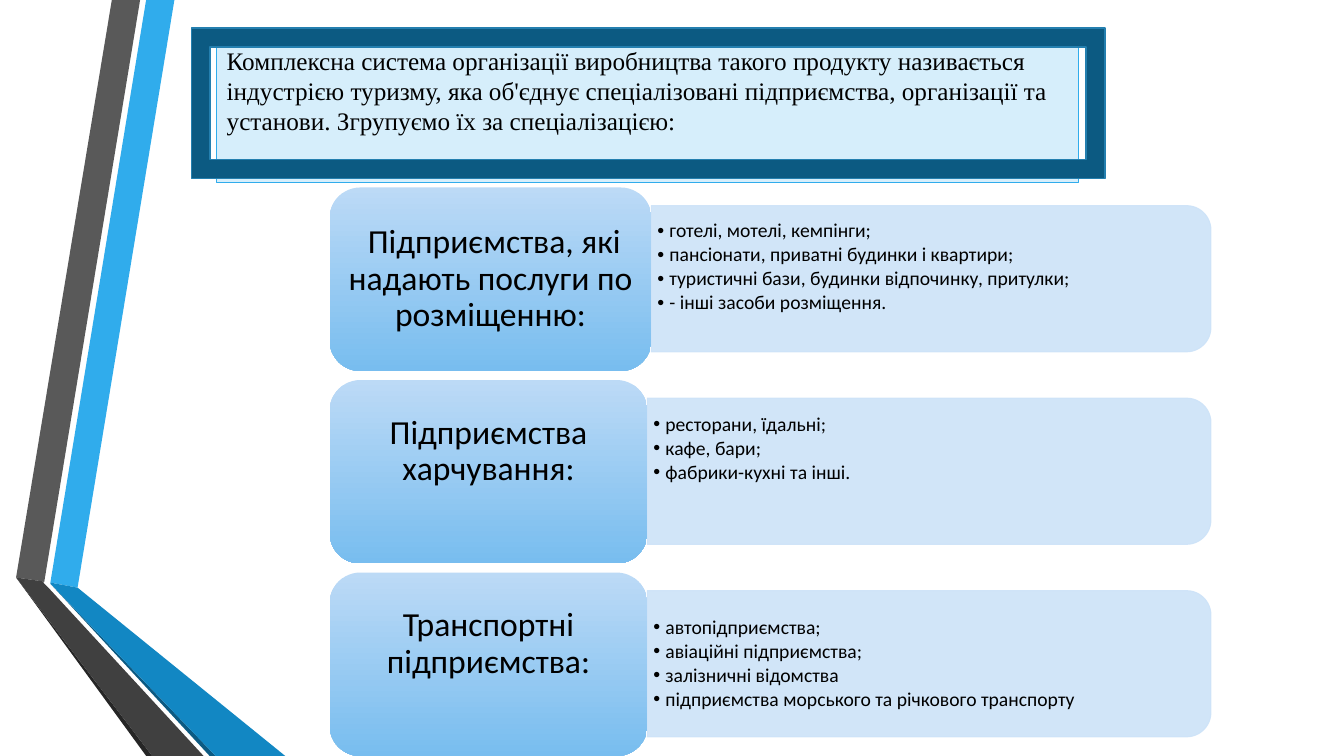
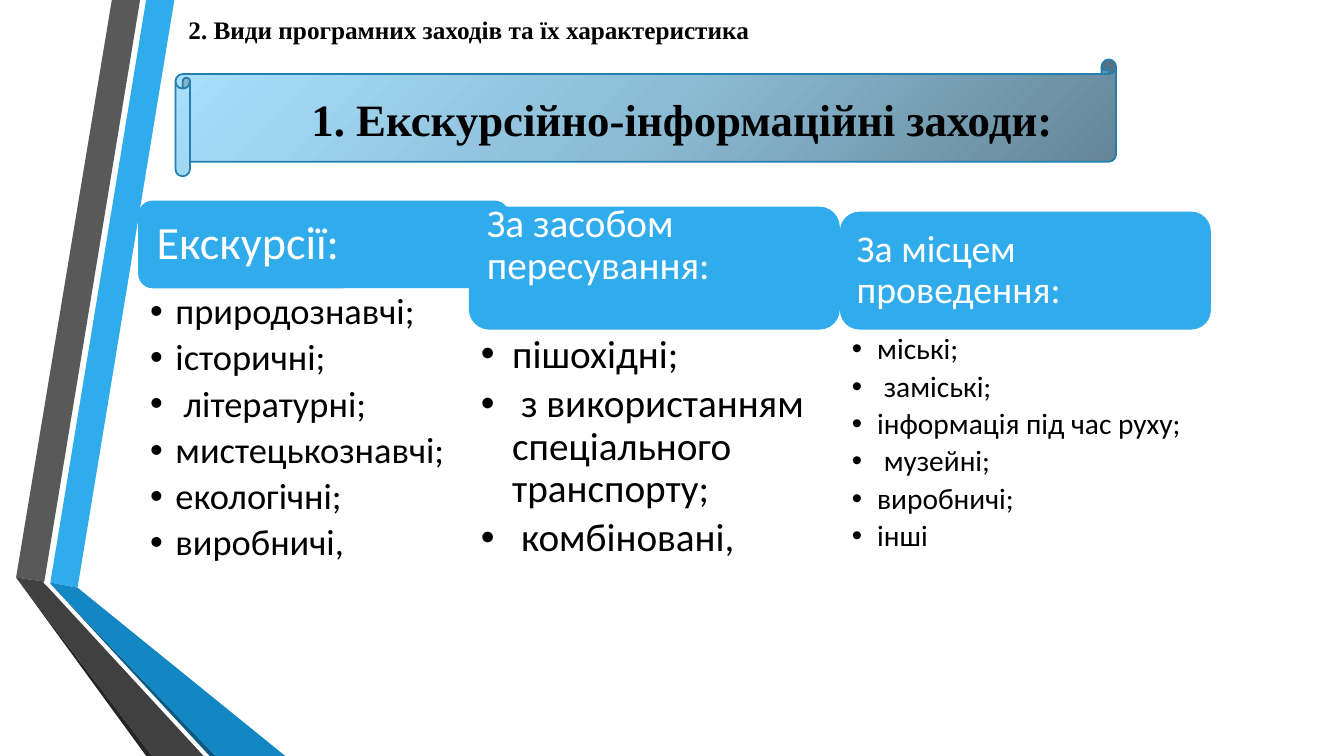
from dataclasses import dataclass

from lxml.etree import SubElement
from pptx import Presentation
from pptx.dml.color import RGBColor
from pptx.enum.shapes import MSO_SHAPE as Preset
from pptx.enum.text import MSO_ANCHOR as Anchor, PP_ALIGN as Align
from pptx.oxml import parse_xml
from pptx.oxml.ns import nsdecls, qn
from pptx.util import Emu, Pt

PX = 9144
SLIDE_WIDTH, SLIDE_HEIGHT = 1333, 750
SERIF, SANS = "Times New Roman", "Calibri"

BLACK = RGBColor(0x00, 0x00, 0x00)
WHITE = RGBColor(0xFF, 0xFF, 0xFF)
SKY = RGBColor(0x30, 0xAC, 0xEC)
BLUE = RGBColor(0x12, 0x87, 0xC3)
NAVY = RGBColor(0x0C, 0x5A, 0x82)
EDGE = RGBColor(0x24, 0x7F, 0xAF)
ICE = RGBColor(0xD6, 0xEE, 0xFB)
PANEL = RGBColor(0xCD, 0xE3, 0xF8)
GRAY = RGBColor(0x59, 0x59, 0x59)
DARK_GRAY = RGBColor(0x40, 0x40, 0x40)
CHARCOAL = RGBColor(0x26, 0x26, 0x26)
LABEL_STOPS = [(0, RGBColor(0xBC, 0xDA, 0xF6)), (100, RGBColor(0x78, 0xBD, 0xEF))]
SCROLL_STOPS = [
    (0, RGBColor(0x63, 0x84, 0x96)),
    (50, RGBColor(0x8C, 0xBC, 0xD5)),
    (100, RGBColor(0xA7, 0xE0, 0xFD)),
]

RIBBONS = [
    (SKY, [(50, 578), (77, 583), (173, 0), (145, 0)]),
    (GRAY, [(139, 0), (111, 0), (16, 573), (44, 577)]),
    (CHARCOAL, [(16, 573), (145, 750), (151, 750)]),
    (NAVY, [(50, 579), (208, 750), (214, 750)]),
    (BLUE, [(50, 579), (214, 750), (283, 750), (77, 583), (50, 578)]),
    (DARK_GRAY, [(202, 750), (48, 583), (43, 578), (44, 577), (16, 573), (151, 750)]),
]


@dataclass
class Row:
    label: str
    items: list
    label_width: int = 315
    label_lift: int = 0
    items_lift: int = 0


@dataclass
class Column:
    box: tuple
    heading: str
    heading_size: int
    heading_inset: int
    items: list
    size: int
    indent: int
    gap: int
    right_inset: int
    heading_lift: int = 0


ROWS = [
    Row(" Підприємства, які надають послуги по розміщенню:",
        ["готелі, мотелі, кемпінги;",
         "пансіонати, приватні будинки і квартири;",
         "туристичні бази, будинки відпочинку, притулки;",
         "- інші засоби розміщення."],
        label_width=319, items_lift=22),
    Row("Підприємства харчування:",
        ["ресторани, їдальні;", "кафе, бари;", "фабрики-кухні та інші."],
        label_lift=40, items_lift=44),
    Row("Транспортні підприємства:",
        ["автопідприємства;", "авіаційні підприємства;", "залізничні відомства",
         "підприємства морського та річкового транспорту"],
        label_lift=40),
]

COLUMNS = [
    Column((137, 199, 368, 87), "Екскурсії:", 33, 14,
           ["природознавчі;", "історичні;", " літературні;", "мистецькознавчі;",
            "екологічні;", "виробничі,"],
           26, 25, 5, 26),
    Column((465, 205, 368, 122), "За засобом пересування:", 28, 12,
           ["пішохідні;", " з використанням спеціального транспорту;", " комбіновані,"],
           28, 31, 5, 28, heading_lift=44),
    Column((833, 210, 368, 117), "За місцем проведення:", 27, 11,
           ["міські;", " заміські;", "інформація під час руху;", " музейні;",
            "виробничі;", "інші"],
           21, 25, 4, 21),
]


def px(value):
    return Emu(round(value * PX))


def paint(shape, fill=None, line=None, line_width=0.75):
    shape.shadow.inherit = False
    if fill is not None:
        shape.fill.solid()
        shape.fill.fore_color.rgb = fill
    if line is None:
        shape.line.fill.background()
    else:
        shape.line.color.rgb = line
        shape.line.width = Pt(line_width)


def add_preset(slide, preset, box, fill=None, line=None, line_width=0.75):
    shape = slide.shapes.add_shape(preset, *map(px, box))
    paint(shape, fill, line, line_width)
    return shape


def add_gradient(shape, stops, angle):
    stop_xml = "".join(
        f'<a:gs pos="{position * 1000}"><a:srgbClr val="{color}"/></a:gs>'
        for position, color in stops
    )
    gradient = parse_xml(
        f'<a:gradFill {nsdecls("a")} rotWithShape="1"><a:gsLst>{stop_xml}</a:gsLst>'
        f'<a:lin ang="{angle * 60000}" scaled="0"/></a:gradFill>'
    )
    shape._element.spPr.find(qn("a:prstGeom")).addnext(gradient)


def set_opacity(shape, percent):
    for color in shape._element.spPr.iter(qn("a:srgbClr")):
        SubElement(color, qn("a:alpha"), val=str(percent * 1000))


def set_frame(frame, insets=(10, 5, 10, 5), anchor=Anchor.TOP, wrap=True):
    frame.word_wrap = wrap
    frame.vertical_anchor = anchor
    left, top, right, bottom = map(px, insets)
    frame.margin_left, frame.margin_top = left, top
    frame.margin_right, frame.margin_bottom = right, bottom


def add_run(paragraph, text, size, font=SANS, color=BLACK, bold=False):
    run = paragraph.add_run()
    run.text = text
    run.font.name = font
    run.font.size = Pt(size)
    run.font.bold = bold
    run.font.color.rgb = color


def write_line(frame, text, size, align=Align.LEFT, spacing=None, **style):
    paragraph = frame.paragraphs[0]
    paragraph.alignment = align
    paragraph.line_spacing = spacing
    add_run(paragraph, text, size, **style)


def write_bullets(frame, items, size, indent, gap):
    for index, item in enumerate(items):
        paragraph = frame.add_paragraph() if index else frame.paragraphs[0]
        properties = paragraph._p.get_or_add_pPr()
        properties.set("marL", str(px(indent)))
        properties.set("indent", str(-px(indent)))
        SubElement(properties, qn("a:buFont"), typeface="Arial")
        SubElement(properties, qn("a:buChar"), char="•")
        paragraph.line_spacing = 0.9
        paragraph.space_after = Pt(gap)
        add_run(paragraph, item, size)


def add_text_box(slide, box, **frame_options):
    frame = slide.shapes.add_textbox(*map(px, box)).text_frame
    set_frame(frame, **frame_options)
    return frame


def add_ribbons(slide):
    for color, points in RIBBONS:
        builder = slide.shapes.build_freeform(*points[0], scale=PX)
        builder.add_line_segments(points[1:], close=True)
        paint(builder.convert_to_shape(), color)


def add_framed_intro(slide, box, text):
    left, top, width, height = box
    card = add_preset(slide, Preset.RECTANGLE,
                      (left + 25, top + 12, width - 51, height - 8), ICE, SKY)
    set_frame(card.text_frame)
    write_line(card.text_frame, text, 18, font=SERIF)
    add_preset(slide, Preset.FRAME, box, NAVY, EDGE, 1.25)


def add_row(slide, box, row):
    left, top, width, height = box
    panel_left = left + row.label_width
    panel_width = width - row.label_width
    panel_top, panel_height = top + 18, 145
    shift = (panel_width - panel_height) / 2
    panel = add_preset(slide, Preset.ROUND_2_SAME_RECTANGLE,
                       (panel_left + shift, panel_top - shift, panel_height, panel_width),
                       PANEL, PANEL)
    panel.rotation = 90
    set_opacity(panel, 90)
    frame = add_text_box(slide, (panel_left, panel_top + 7, panel_width - 7, panel_height - 14),
                         insets=(6, 3, 6, 3 + row.items_lift), anchor=Anchor.MIDDLE)
    write_bullets(frame, row.items, 14, 12, 2)
    label = add_preset(slide, Preset.ROUNDED_RECTANGLE, (left, top, row.label_width, height))
    add_gradient(label, LABEL_STOPS, 90)
    set_frame(label.text_frame, (10, 5, 10, 5 + row.label_lift), Anchor.MIDDLE)
    write_line(label.text_frame, row.label, 24, Align.CENTER, 0.9)


def add_scroll_heading(slide, box, text):
    left, top, width, height = box
    scroll = add_preset(slide, Preset.HORIZONTAL_SCROLL, box, line=EDGE, line_width=1.25)
    add_gradient(scroll, SCROLL_STOPS, 225)
    frame = add_text_box(slide, (left + 125, top + 27, width - 170, 64), wrap=False)
    write_line(frame, text, 32, font=SERIF, bold=True)


def add_column(slide, column):
    left, top, width, height = column.box
    inset = column.heading_inset
    header = add_preset(slide, Preset.ROUNDED_RECTANGLE, column.box, SKY)
    set_frame(header.text_frame, (inset, inset, inset, inset + column.heading_lift),
              Anchor.MIDDLE)
    write_line(header.text_frame, column.heading, column.heading_size, spacing=0.9, color=WHITE)
    frame = add_text_box(slide, (left, top + height, width, 290),
                         insets=(12, 5, column.right_inset, 5))
    write_bullets(frame, column.items, column.size, column.indent, column.gap)


def add_slide(presentation):
    slide = presentation.slides.add_slide(presentation.slide_layouts[6])
    add_ribbons(slide)
    return slide


def build_industry_slide(presentation):
    slide = add_slide(presentation)
    add_framed_intro(
        slide, (190, 28, 906, 149),
        "Комплексна система організації виробництва такого продукту називається "
        "індустрією туризму, яка об'єднує спеціалізовані підприємства, організації "
        "та установи. Згрупуємо їх за спеціалізацією:")
    for index, row in enumerate(ROWS):
        add_row(slide, (327, 186 + index * 191, 874, 182), row)


def build_excursion_slide(presentation):
    slide = add_slide(presentation)
    add_scroll_heading(slide, (174, 59, 933, 116), "1. Екскурсійно-інформаційні заходи:")
    frame = add_text_box(slide, (174, 9, 582, 38), wrap=False)
    write_line(frame, "2. Види програмних заходів та їх характеристика", 18,
               Align.CENTER, font=SERIF, bold=True)
    for column in COLUMNS:
        add_column(slide, column)


def main():
    presentation = Presentation()
    presentation.slide_width = px(SLIDE_WIDTH)
    presentation.slide_height = px(SLIDE_HEIGHT)
    build_industry_slide(presentation)
    build_excursion_slide(presentation)
    presentation.save("out.pptx")


if __name__ == "__main__":
    main()
